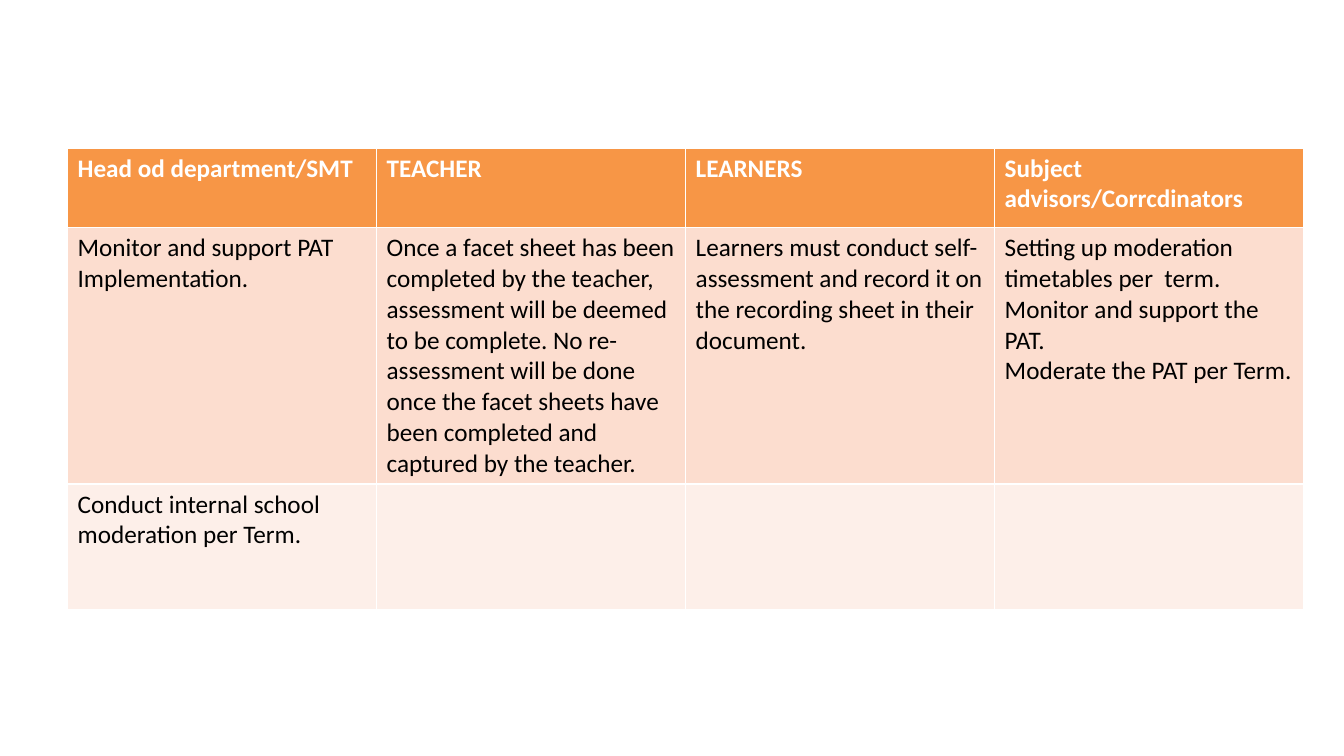
from pptx import Presentation
from pptx.dml.color import RGBColor
from pptx.util import Inches, Pt

WHITE = RGBColor(0xFF, 0xFF, 0xFF)
BLACK = RGBColor(0, 0, 0)
ORANGE = RGBColor(0xF7, 0x96, 0x46)
PEACH = RGBColor(0xFC, 0xDD, 0xCF)
CREAM = RGBColor(0xFD, 0xEF, 0xE9)

# Row height, fill, font colour and cell texts
ROWS = [
    (0.79, ORANGE, WHITE, [
        "Head od department/SMT",
        "TEACHER",
        "LEARNERS",
        "Subject advisors/Corrcdinators",
    ]),
    (2.54, PEACH, BLACK, [
        "Monitor and support PAT Implementation.",
        "Once a facet sheet has been completed by the teacher, "
        "assessment will be deemed to be complete. No re-assessment "
        "will be done once the facet sheets have been completed and "
        "captured by the teacher.",
        "Learners must conduct self-assessment and record it on the "
        "recording sheet in their document.",
        "Setting up moderation timetables per  term.\n"
        "Monitor and support the PAT.\n"
        "Moderate the PAT per Term.",
    ]),
    (1.25, CREAM, BLACK, [
        "Conduct internal school moderation per Term.", "", "", "",
    ]),
]

prs = Presentation()
prs.slide_width = Inches(13.33)
prs.slide_height = Inches(7.5)
slide = prs.slides.add_slide(prs.slide_layouts[6])

# Table of duties; its default style draws the white grid lines
height = sum(row[0] for row in ROWS)
table = slide.shapes.add_table(
    len(ROWS), 4, Inches(0.67), Inches(1.47), Inches(12.26), Inches(height)
).table

for r, (height, fill, color, texts) in enumerate(ROWS):
    table.rows[r].height = Inches(height)
    for c, words in enumerate(texts):
        cell = table.cell(r, c)
        cell.fill.solid()
        cell.fill.fore_color.rgb = fill
        cell.text_frame.text = words
        for para in cell.text_frame.paragraphs:
            for run in para.runs:
                run.font.name = "Calibri"
                run.font.size = Pt(18)
                run.font.bold = r == 0
                run.font.color.rgb = color

prs.save("out.pptx")
